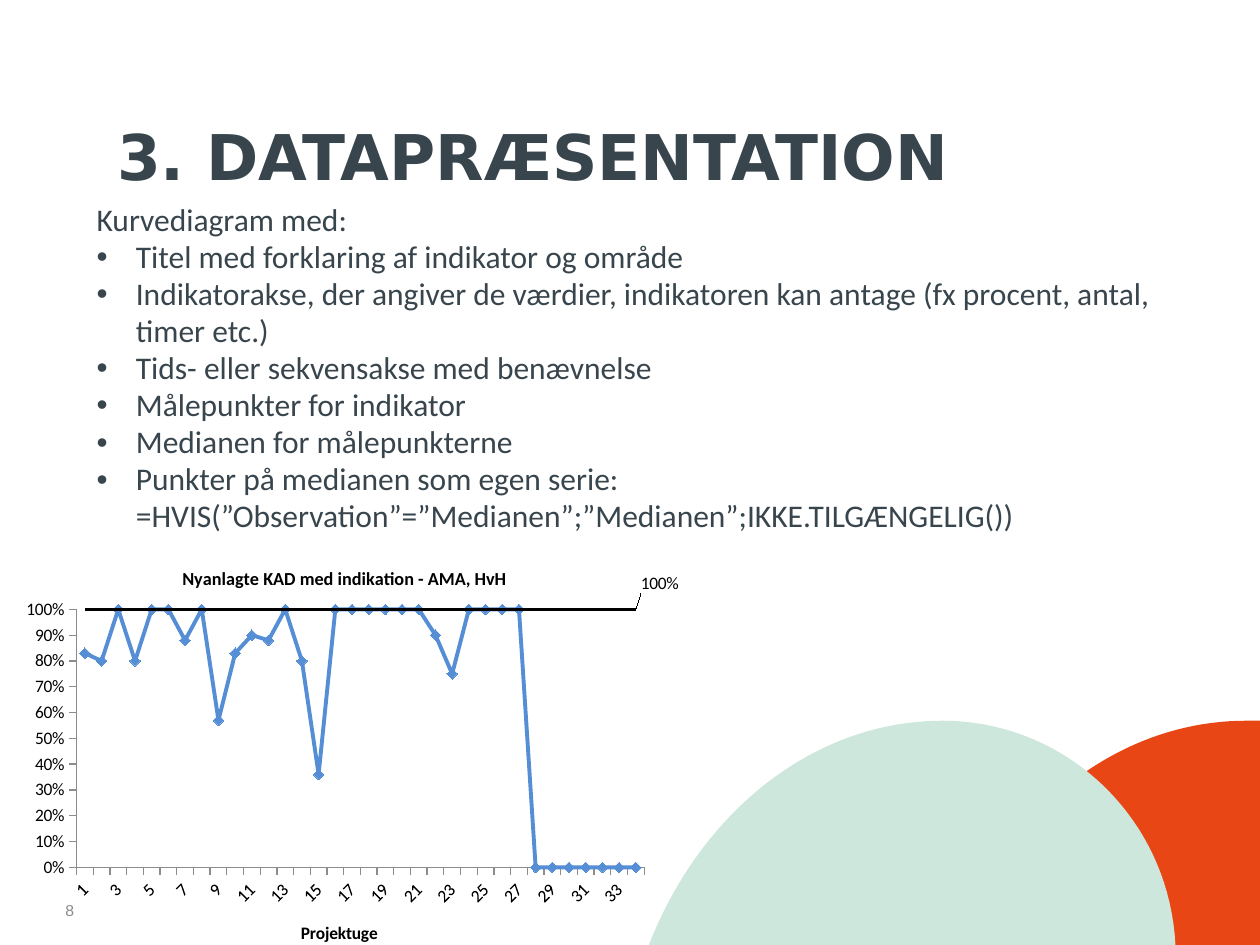
"""Build the slide on data presentation with a run chart of catheter indications."""
from dataclasses import dataclass
from math import sqrt

from lxml.etree import SubElement
from pptx import Presentation
from pptx.chart.data import CategoryChartData
from pptx.dml.color import RGBColor
from pptx.enum.chart import XL_CHART_TYPE as ChartType, XL_LABEL_POSITION as LabelPosition
from pptx.enum.chart import XL_MARKER_STYLE as MarkerStyle, XL_TICK_MARK as TickMark
from pptx.enum.text import MSO_ANCHOR as Anchor
from pptx.oxml.ns import qn
from pptx.util import Cm, Pt


@dataclass(frozen=True)
class Theme:
    ink: RGBColor = RGBColor.from_string("38454D")
    muted: RGBColor = RGBColor.from_string("8C8C8C")
    orange: RGBColor = RGBColor.from_string("E84615")
    mint: RGBColor = RGBColor.from_string("CEE7DC")
    blue: RGBColor = RGBColor.from_string("558ED5")
    black: RGBColor = RGBColor.from_string("000000")
    title_size: Pt = Pt(36)
    body_size: Pt = Pt(18)
    number_size: Pt = Pt(9)
    chart_size: Pt = Pt(10)
    chart_title_size: Pt = Pt(10.5)


def add_text(slide, box, lines, **font_values):
    shape = slide.shapes.add_textbox(*map(Cm, box))
    shape.text_frame.word_wrap = True
    for index, line in enumerate(lines):
        paragraph = shape.text_frame.paragraphs[0] if index == 0 else shape.text_frame.add_paragraph()
        paragraph.text = line
        color = font_values["color"]
        for run in paragraph.runs:
            run.font.color.rgb = color
            for name, value in font_values.items():
                if name != "color":
                    setattr(run.font, name, value)
    return shape.text_frame


def set_layout(parent, index, **values):
    for old_layout in parent.findall(qn("c:layout")):
        parent.remove(old_layout)
    layout = SubElement(parent, qn("c:layout"))
    manual = SubElement(layout, qn("c:manualLayout"))
    for name, value in values.items():
        SubElement(manual, qn(f"c:{name}")).set("val", str(value))
    parent.insert(index, layout)


theme = Theme()
presentation = Presentation()
presentation.slide_width, presentation.slide_height = Cm(25.4), Cm(19.05)
slide = presentation.slides.add_slide(presentation.slide_layouts[6])

hill_top, hill_height, steps = 14.53, 4.52, 40
drops = [hill_height * (step / steps) ** 2 for step in range(steps + 1)]
left_arc, right_arc = (
    [(side * radius_x * sqrt(1 - (1 - drop / radius_y) ** 2), hill_top + drop) for drop in drops]
    for side, radius_x, radius_y in ((-1, 6.55, 7.9), (1, 4.7, 4.75))
)
right_edge = [(0.28, hill_top), (0.28, hill_top + hill_height)]
for peak, right_side, color in ((25.12, right_edge, theme.orange), (19.0, right_arc, theme.mint)):
    points = [(Cm(peak + x), Cm(y)) for x, y in left_arc[::-1] + right_side]
    builder = slide.shapes.build_freeform(*points[0], scale=1.0)
    builder.add_line_segments(points[1:], close=True)
    hill = builder.convert_to_shape()
    hill.shadow.inherit = False
    hill.fill.solid()
    hill.fill.fore_color.rgb = color
    hill.line.fill.background()

number_frame = add_text(slide, (1.07, 17.83, 5.92, 1.02), ["8"],
                        name="Arial", size=theme.number_size, color=theme.muted)
number_frame.vertical_anchor = Anchor.MIDDLE

title_frame = add_text(slide, (2.11, 2.11, 18.42, 2.54), ["3. DATAPRÆSENTATION"],
                       name="DejaVu Sans", size=theme.title_size, color=theme.ink, bold=True)
title_frame.margin_top = Cm(0.25)

body_lines = [
    "Kurvediagram med:",
    "Titel med forklaring af indikator og område",
    "Indikatorakse, der angiver de værdier, indikatoren kan antage (fx procent, antal, timer etc.)",
    "Tids- eller sekvensakse med benævnelse",
    "Målepunkter for indikator",
    "Medianen for målepunkterne",
    "Punkter på medianen som egen serie:\n=HVIS(”Observation”=”Medianen”;”Medianen”;IKKE.TILGÆNGELIG())",
]
body_frame = add_text(slide, (1.7, 3.94, 23.01, 10.26), body_lines,
                      name="Calibri", size=theme.body_size, color=theme.ink)
for index, paragraph in enumerate(body_frame.paragraphs):
    paragraph.line_spacing = 0.98
    if index:
        properties = paragraph._p.get_or_add_pPr()
        properties.set("marL", str(Cm(0.79)))
        properties.set("indent", str(-Cm(0.79)))
        SubElement(properties, qn("a:buFont")).set("typeface", "Arial")
        SubElement(properties, qn("a:buChar")).set("char", "•")

observations = [0.83, 0.8, 1, 0.8, 1, 1, 0.88, 1, 0.57, 0.83, 0.9, 0.88, 1, 0.8, 0.36,
                1, 1, 1, 1, 1, 1, 0.9, 0.75, 1, 1, 1, 1] + [None] * 7
week_count = len(observations)
chart_data = CategoryChartData(number_format="0%")
chart_data.categories = [str(week) for week in range(1, week_count + 1)]
chart_data.add_series("Series 1", observations)
chart_data.add_series("Series 2", [1] * week_count)
chart = slide.shapes.add_chart(ChartType.LINE_MARKERS, Cm(0.28), Cm(10.92), Cm(13.41), Cm(8.53),
                               chart_data).chart
chart.has_legend = False
for name, value in {"name": "Calibri", "size": theme.chart_size}.items():
    setattr(chart.font, name, value)
chart.font.color.rgb = theme.black
chart._chartSpace.find(".//" + qn("c:dispBlanksAs")).set("val", "zero")

week_axis, value_axis = chart.category_axis, chart.value_axis
for axis in (week_axis, value_axis):
    axis.has_major_gridlines = False
    axis.major_tick_mark = TickMark.OUTSIDE
    axis.format.line.color.rgb = theme.muted
    axis.format.line.width = Pt(0.75)
    axis.tick_labels.font.size = theme.chart_size
for name, value in {"minimum_scale": 0, "maximum_scale": 1, "major_unit": 0.1}.items():
    setattr(value_axis, name, value)
value_axis.tick_labels.number_format = "0%"
value_axis.tick_labels.number_format_is_linked = False
week_axis._element.find(qn("c:txPr")).find(qn("a:bodyPr")).set("rot", "-2700000")
label_skip = SubElement(week_axis._element, qn("c:tickLblSkip"))
label_skip.set("val", "2")
week_axis._element.find(qn("c:noMultiLvlLbl")).addprevious(label_skip)

titles = (
    (chart, "Nyanlagte KAD med indikation - AMA, HvH", theme.chart_title_size, 0.25, 0.05),
    (week_axis, "Projektuge", theme.chart_size, 0.43, 0.89),
)
for owner, text, size, x, y in titles:
    title = owner.chart_title if owner is chart else owner.axis_title
    title.text_frame.text = text
    font = title.text_frame.paragraphs[0].runs[0].font
    for name, value in {"name": "Calibri", "size": size, "bold": True}.items():
        setattr(font, name, value)
    font.color.rgb = theme.black
    set_layout(title._element, 1, xMode="edge", yMode="edge", x=x, y=y)
set_layout(chart._chartSpace.find(".//" + qn("c:plotArea")), 0, layoutTarget="inner",
           xMode="edge", yMode="edge", x=0.095, y=0.16, w=0.86, h=0.61)

observed, median = chart.plots[0].series
for series, color, width in ((observed, theme.blue, 2.25), (median, theme.black, 1.5)):
    series.smooth = False
    series.format.line.color.rgb = color
    series.format.line.width = Pt(width)
observed.marker.style = MarkerStyle.DIAMOND
observed.marker.size = 6
observed.marker.format.fill.solid()
observed.marker.format.fill.fore_color.rgb = theme.blue
observed.marker.format.line.color.rgb = theme.blue
median.marker.style = MarkerStyle.NONE
chart.plots[0].vary_by_categories = False

median.data_labels.show_value = False
last_label = median.points[week_count - 1].data_label
last_label.position = LabelPosition.RIGHT
last_label.font.size = theme.chart_size
set_layout(median._element.find(".//" + qn("c:dLbl")), 1, x=0, y=-0.06)

presentation.save("out.pptx")
